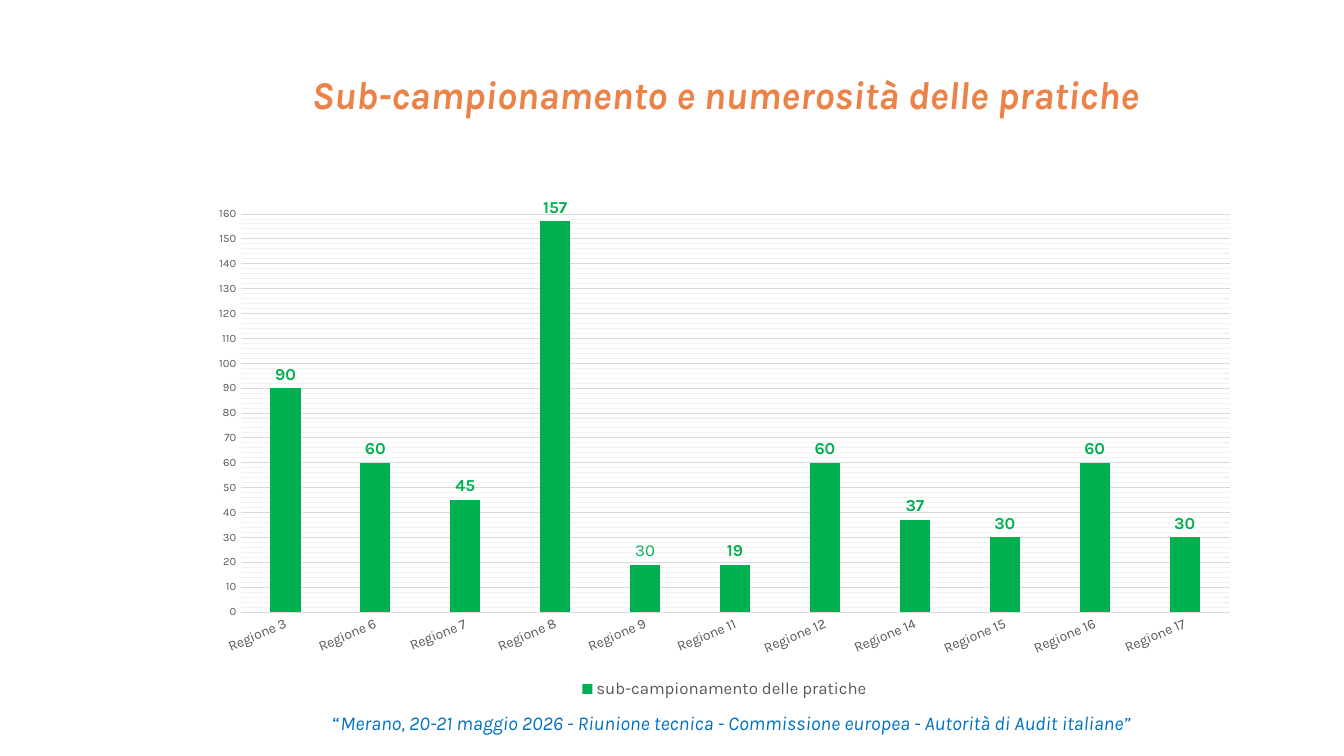
from copy import deepcopy
from lxml.etree import SubElement
from pptx import Presentation
from pptx.chart.data import CategoryChartData
from pptx.dml.color import RGBColor
from pptx.enum.chart import XL_CHART_TYPE, XL_LABEL_POSITION, XL_LEGEND_POSITION, XL_TICK_MARK
from pptx.enum.text import MSO_ANCHOR, MSO_AUTO_SIZE, PP_ALIGN
from pptx.oxml.ns import qn
from pptx.util import Cm, Pt

FACE = "Karla"
ORANGE = RGBColor(0xEB, 0x82, 0x47)
BLUE = RGBColor(0x00, 0x70, 0xC0)
GREEN = RGBColor(0x00, 0xB0, 0x50)
GREY = RGBColor(0x59, 0x59, 0x59)
RULE = RGBColor(0xD9, 0xD9, 0xD9)
FAINT = RGBColor(0xF2, 0xF2, 0xF2)
COUNTS = {3: 90, 6: 60, 7: 45, 8: 157, 9: 19, 11: 19, 12: 60, 14: 37, 15: 30, 16: 60, 17: 30}


def style(font, size, color, bold=False, italic=False):
    """Set face, size, colour and weight of a font."""
    font.name = FACE
    font.size = Pt(size)
    font.color.rgb = color
    font.bold = bold
    font.italic = italic


def add_run(para, text, *look):
    """Add one styled run to a paragraph."""
    run = para.add_run()
    run.text = text
    style(run.font, *look)


def rule_line(line, color):
    """Give a line its colour and the common width."""
    line.color.rgb = color
    line.width = Pt(0.75)


def put_title(slide, left, top, width, height):
    """Place the title in the upper part of its box."""
    title = slide.shapes.title
    title.left, title.top, title.width, title.height = left, top, width, height
    frame = title.text_frame
    frame.auto_size = MSO_AUTO_SIZE.NONE
    frame.word_wrap = True
    frame.vertical_anchor = MSO_ANCHOR.MIDDLE
    frame.margin_bottom = Cm(1.27)
    para = frame.paragraphs[0]
    para.alignment = PP_ALIGN.CENTER
    para.line_spacing = 0.9
    para.space_before = Pt(0)
    add_run(para, "Sub-campionamento e numerosità delle pratiche", 28, ORANGE, True, True)


def put_event(slide, left, top, width, height):
    """Write the event line in its box."""
    frame = slide.shapes.add_textbox(left, top, width, height).text_frame
    frame.word_wrap = True
    frame.auto_size = MSO_AUTO_SIZE.SHAPE_TO_FIT_TEXT
    para = frame.paragraphs[0]
    para.line_spacing = 1.15
    para.space_after = Pt(8)
    add_run(para, "“", 14, BLUE)
    add_run(para, "Merano, 20-21 maggio 2026 - Riunione tecnica - Commissione europea"
            " - Autorità di Audit italiane”", 14, BLUE, False, True)


def style_grid(axis):
    """Draw the major grid lines and the fainter minor ones."""
    axis.has_major_gridlines = axis.has_minor_gridlines = True
    line = axis.major_gridlines.format.line
    rule_line(line, FAINT)
    major = axis._element.find(qn("c:majorGridlines"))
    minor = axis._element.find(qn("c:minorGridlines"))
    minor.append(deepcopy(major.find(qn("c:spPr"))))
    rule_line(line, RULE)


def style_axes(chart):
    """Format both axes and the grid."""
    cats, vals = chart.category_axis, chart.value_axis
    for axis, size in ((cats, 10), (vals, 8)):
        axis.major_tick_mark = axis.minor_tick_mark = XL_TICK_MARK.NONE
        style(axis.tick_labels.font, size, GREY)
    rule_line(cats.format.line, RULE)
    body = cats._element.find(qn("c:txPr")).find(qn("a:bodyPr"))
    body.set("rot", str(-23 * 60000))
    body.set("vert", "horz")
    vals.format.line.fill.background()
    vals.minimum_scale, vals.maximum_scale = 0, 160
    vals.major_unit, vals.minor_unit = 10, 2
    style_grid(vals)


def style_bars(plot):
    """Format the columns and their labels."""
    plot.gap_width = 199
    plot.vary_by_categories = False
    bars = plot.series[0]
    bars.format.fill.solid()
    bars.format.fill.fore_color.rgb = GREEN
    labels = bars.data_labels
    labels.show_value = True
    labels.position = XL_LABEL_POSITION.OUTSIDE_END
    style(labels.font, 12, GREEN, True)
    label = bars.points[list(COUNTS).index(9)].data_label
    add_run(label.text_frame.paragraphs[0], "30", 12, GREEN)
    label.position = XL_LABEL_POSITION.OUTSIDE_END


def place_plot(plot):
    """Fix the inner plot area within the chart."""
    place = plot.find(qn("c:layout"))
    if place is None:
        place = SubElement(plot, qn("c:layout"))
        plot.insert(0, place)
    inner = SubElement(place, qn("c:manualLayout"))
    for tag, val in (("layoutTarget", "inner"), ("xMode", "edge"), ("yMode", "edge"),
                     ("x", 0.04), ("y", 0.03), ("w", 0.94), ("h", 0.79)):
        SubElement(inner, qn(f"c:{tag}")).set("val", str(val))


def put_chart(slide, left, top, width, height):
    """Draw the column chart of the regions in its box."""
    data = CategoryChartData()
    data.categories = [f"Regione {num}" for num in COUNTS]
    data.add_series("sub-campionamento delle pratiche", COUNTS.values())
    chart = slide.shapes.add_chart(
        XL_CHART_TYPE.COLUMN_CLUSTERED, left, top, width, height, data).chart
    style(chart.font, 10, GREY)
    chart.has_title = False
    chart.has_legend = True
    chart.legend.position = XL_LEGEND_POSITION.BOTTOM
    chart.legend.include_in_layout = False
    style(chart.legend.font, 12, GREY)
    style_axes(chart)
    style_bars(chart.plots[0])
    place_plot(chart._chartSpace.chart.plotArea)


def main():
    """Build the slide and save it."""
    deck = Presentation()
    deck.slide_width, deck.slide_height = Cm(33.87), Cm(19.05)
    slide = deck.slides.add_slide(deck.slide_layouts[5])
    put_title(slide, Cm(4.65), Cm(2.08), Cm(27.25), Cm(1.88))
    put_event(slide, Cm(8.13), Cm(17.7), Cm(26.9), Cm(0.91))
    put_chart(slide, Cm(5), Cm(4.98), Cm(26.52), Cm(12.73))
    deck.save("out.pptx")


if __name__ == "__main__":
    main()
